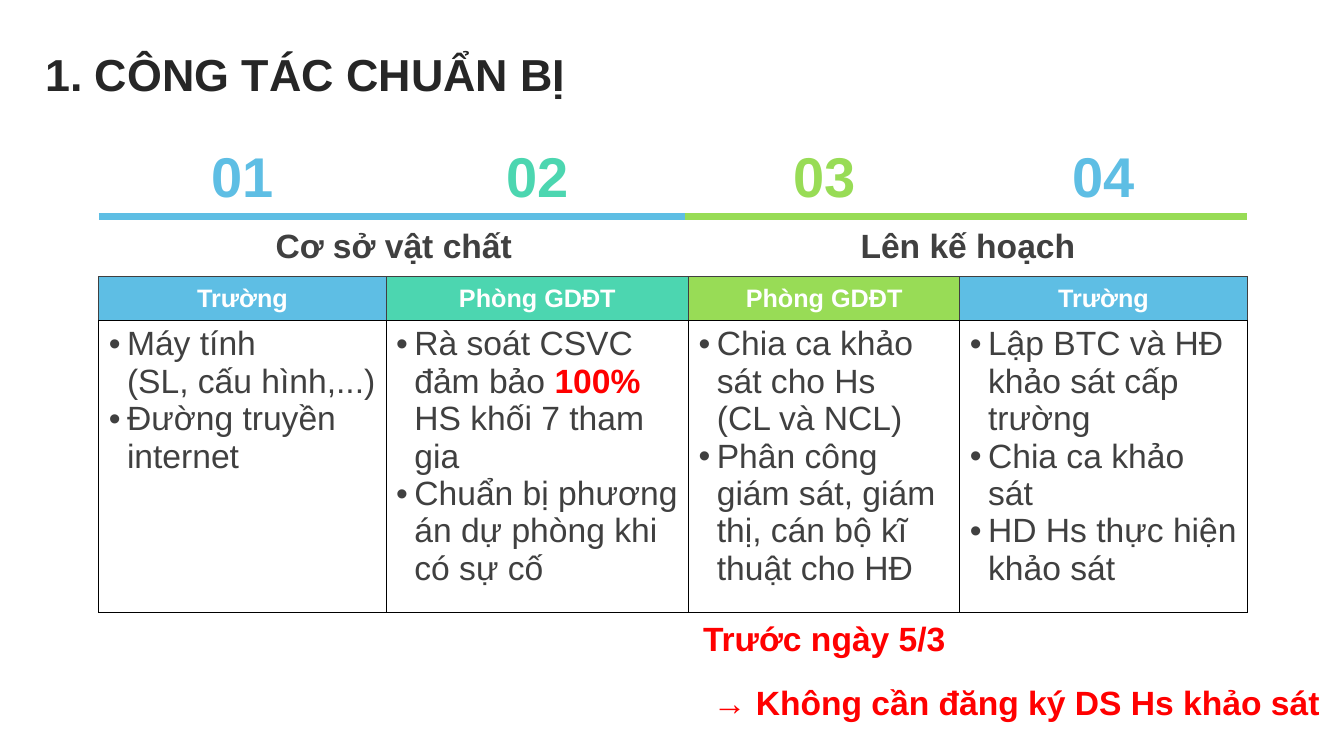
from lxml.etree import SubElement
from pptx import Presentation
from pptx.dml.color import RGBColor
from pptx.enum.text import MSO_ANCHOR, MSO_AUTO_SIZE, PP_ALIGN
from pptx.oxml.ns import qn
from pptx.util import Inches, Pt

# Colours
BLUE = RGBColor(0x5E, 0xBE, 0xE4)
TEAL = RGBColor(0x4C, 0xD6, 0xB0)
GREEN = RGBColor(0x98, 0xDC, 0x56)
DARK = RGBColor(0x26, 0x26, 0x26)
GREY = RGBColor(0x40, 0x40, 0x40)
RED = RGBColor(0xFF, 0x00, 0x00)
WHITE = RGBColor(0xFF, 0xFF, 0xFF)
BLACK = RGBColor(0x00, 0x00, 0x00)

HUES = [BLUE, TEAL, GREEN, BLUE]
HEADS = ["Trường", "Phòng GDĐT", "Phòng GDĐT", "Trường"]
GROUPS = ["Cơ sở vật chất", "Lên kế hoạch"]
# Each column holds paragraphs, each paragraph holds its runs
TASKS = [
    [["Máy tính \n(SL, cấu hình,...)"], ["Đường truyền internet"]],
    [["Rà soát CSVC đảm bảo ", "100%", " HS khối 7 tham gia"],
     ["Chuẩn bị phương án dự phòng khi có sự cố"]],
    [["Chia ca khảo sát cho Hs \n(CL và NCL)"],
     ["Phân công giám sát, giám thị, cán bộ kĩ thuật cho HĐ"]],
    [["Lập BTC và HĐ khảo sát cấp trường"], ["Chia ca khảo sát"],
     ["HD Hs thực hiện khảo sát"]],
]
STRONG = {"100%"}


class Deck:
    font = "Arial"

    def __init__(self, width, height):
        self.show = Presentation()
        self.show.slide_width = Inches(width)
        self.show.slide_height = Inches(height)
        self.slide = self.show.slides.add_slide(self.show.slide_layouts[6])

    def words(self, par, text, size, color, bold=True):
        for i, line in enumerate(text.split("\n")):
            if i:
                par.add_line_break()
            run = par.add_run()
            run.text = line
            style = {"name": self.font, "size": Pt(size), "bold": bold}
            for key, value in style.items():
                setattr(run.font, key, value)
            run.font.color.rgb = color

    def label(self, at, text, size, color, frame=None, para=None):
        box = self.slide.shapes.add_textbox(*map(Inches, at))
        body = box.text_frame
        body.word_wrap = True
        for key, value in (frame or {}).items():
            setattr(body, key, value)
        for key, value in (para or {}).items():
            setattr(body.paragraphs[0], key, value)
        self.words(body.paragraphs[0], text, size, color)

    def table(self, at, cols, rows):
        size = at + (sum(cols), sum(rows))
        grid = self.slide.shapes.add_table(
            len(rows), len(cols), *map(Inches, size)).table
        grid.first_row = grid.horz_banding = False
        for col, width in zip(grid.columns, cols):
            col.width = Inches(width)
        for row, height in zip(grid.rows, rows):
            row.height = Inches(height)
        return grid

    def paint(self, cell, color, edges, alpha=None):
        """Fill a cell and draw its edges, given as side: (colour, points)."""
        cell.fill.solid()
        cell.fill.fore_color.rgb = color
        props = cell._tc.get_or_add_tcPr()
        if alpha:
            tint = props.find(".//" + qn("a:srgbClr"))
            SubElement(tint, qn("a:alpha"), val=str(alpha * 1000))
        for i, side in enumerate("LRTB"):
            line = SubElement(props, qn("a:ln" + side))
            props.insert(i, line)
            if side in edges:
                hue, width = edges[side]
                line.set("w", str(Pt(width)))
                solid = SubElement(line, qn("a:solidFill"))
                SubElement(solid, qn("a:srgbClr"), val=str(hue))
            else:
                SubElement(line, qn("a:noFill"))

    def head(self, cell, text, size, color):
        cell.vertical_anchor = MSO_ANCHOR.MIDDLE
        par = cell.text_frame.paragraphs[0]
        par.alignment = PP_ALIGN.CENTER
        self.words(par, text, size, color)

    def bullets(self, cell, items):
        body = cell.text_frame
        for i, runs in enumerate(items):
            par = body.add_paragraph() if i else body.paragraphs[0]
            props = par._p.get_or_add_pPr()
            props.set("marL", str(Inches(0.18)))
            props.set("indent", str(-Inches(0.18)))
            SubElement(props, qn("a:buFont"), typeface=self.font)
            SubElement(props, qn("a:buChar"), char="•")
            for text in runs:
                bold = text in STRONG
                self.words(par, text, 24, RED if bold else GREY, bold)


def main():
    deck = Deck(13.33, 7.5)

    # Title
    deck.label((0.35, 0.37, 12.66, 0.79), "1. CÔNG TÁC CHUẨN BỊ", 32, DARK,
               {"vertical_anchor": MSO_ANCHOR.MIDDLE},
               {"line_spacing": 0.9, "space_before": Pt(10)})

    # Table: numbers, column heads and tasks
    grid = deck.table((0.98, 1.38), [2.85, 3, 2.69, 2.85],
                      [0.7, 0.6, 0.43, 2.61])
    gap, thin, ink = (WHITE, 6), (GREY, 1), (BLACK, 1)
    for i, hue in enumerate(HUES):
        top, _, name, task = [grid.cell(row, i) for row in range(4)]
        edges = {"B": (hue, 6)}
        if i > 0:
            edges["L"] = gap
        if i < 3:
            edges["R"] = gap
        deck.paint(top, WHITE, edges)
        deck.head(top, f"{i + 1:02}", 40, hue)
        deck.paint(name, hue, {**dict.fromkeys("LRT", thin), "B": ink})
        deck.head(name, HEADS[i], 18, WHITE)
        deck.paint(task, WHITE, dict.fromkeys("LRTB", ink), 20)
        deck.bullets(task, TASKS[i])

    # Group names, each over two columns
    for i, text in enumerate(GROUPS):
        left, right = grid.cell(1, 2 * i), grid.cell(1, 2 * i + 1)
        left.merge(right)
        side = "L" if i else "R"
        for cell in (left, right):
            edges = {"T": (HUES[2 * i], 6), "B": thin}
            if cell is (left if i else right):
                edges[side] = gap
            deck.paint(cell, WHITE, edges)
        deck.head(left, text, 24, GREY)

    # Red notes
    frame = {"auto_size": MSO_AUTO_SIZE.SHAPE_TO_FIT_TEXT,
             "margin_left": Inches(0.12), "margin_right": Inches(0.12)}
    notes = [(6.08, 2.71, "Trước ngày 5/3"),
             (6.72, 6.52, "→ Không cần đăng ký DS Hs khảo sát")]
    for top, width, text in notes:
        deck.label((6.82, top, width, 0.5), text, 24, RED, frame,
                   {"alignment": PP_ALIGN.CENTER})

    deck.show.save("out.pptx")


if __name__ == "__main__":
    main()
